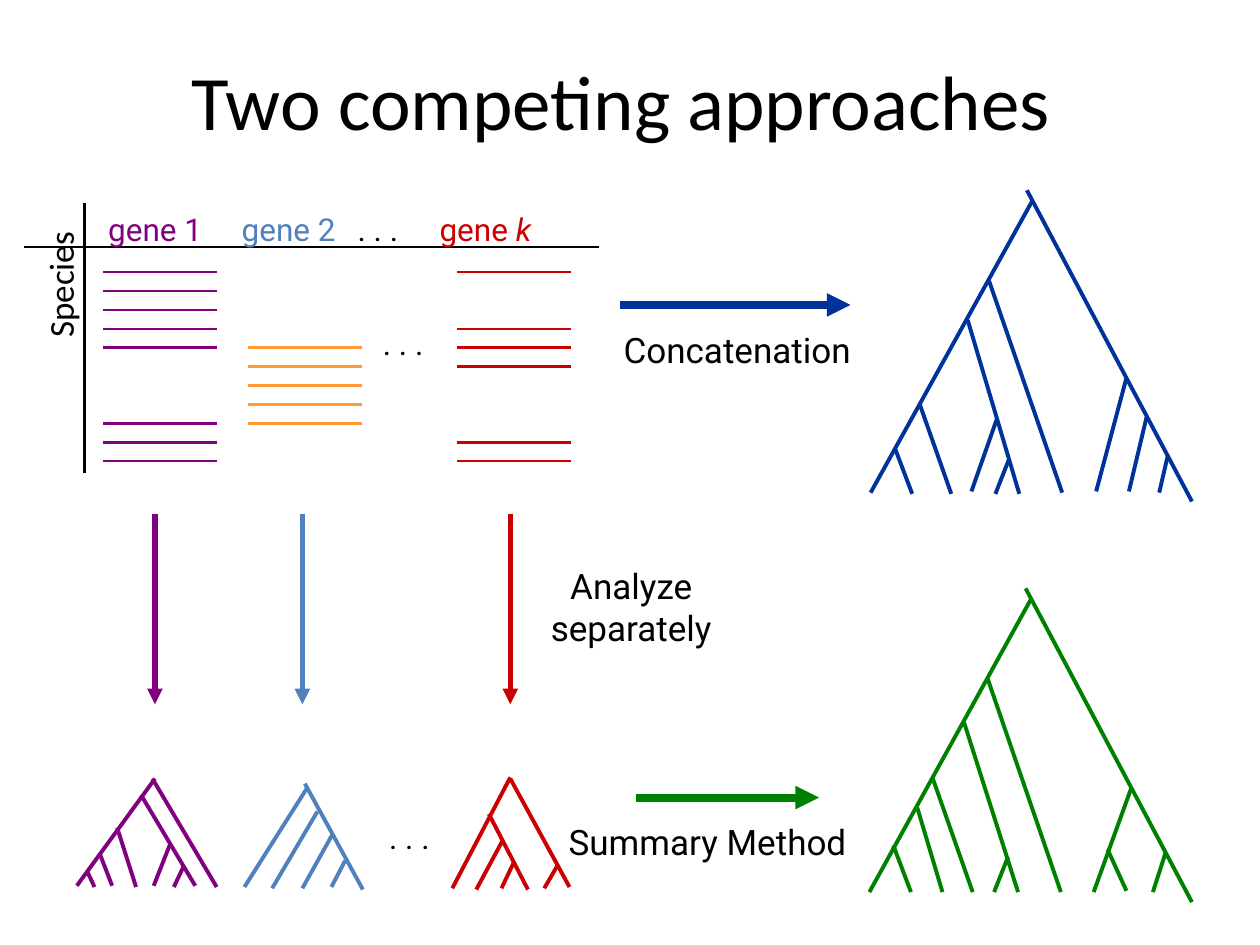
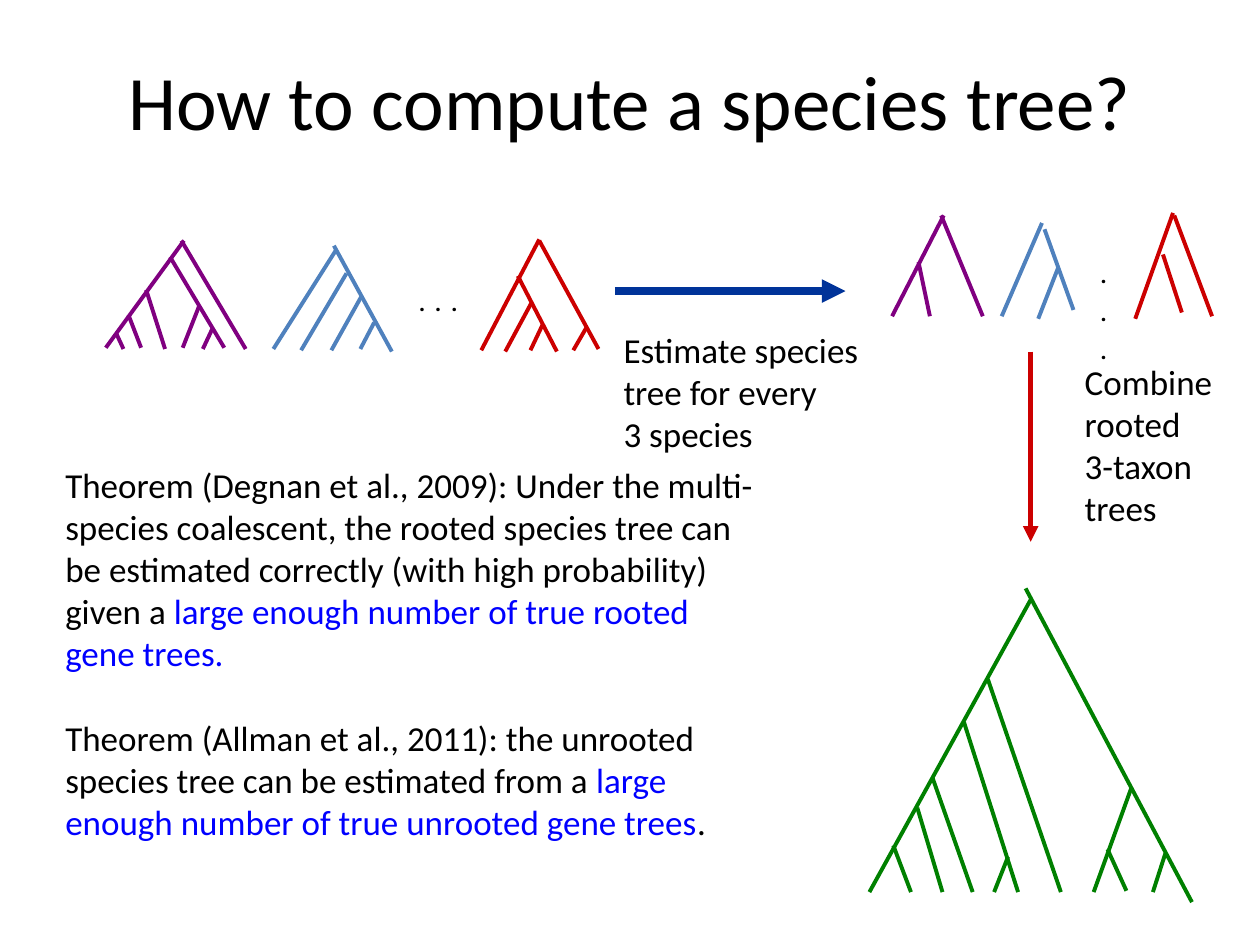
import pptx
import pptx.util
import pptx.dml.color
import pptx.enum.shapes
import pptx.enum.text
import pptx.oxml
import pptx.oxml.ns

Inches = pptx.util.Inches
Pt = pptx.util.Pt
RGBColor = pptx.dml.color.RGBColor
ALIGN = pptx.enum.text.PP_ALIGN
STRAIGHT = pptx.enum.shapes.MSO_CONNECTOR.STRAIGHT
qn = pptx.oxml.ns.qn

BLACK = RGBColor(0x00, 0x00, 0x00)
PURPLE = RGBColor(0x80, 0x00, 0x80)
BLUE = RGBColor(0x4F, 0x81, 0xBD)
RED = RGBColor(0xCC, 0x00, 0x00)
ORANGE = RGBColor(0xFF, 0x99, 0x33)
GREEN = RGBColor(0x00, 0x80, 0x00)
NAVY = RGBColor(0x00, 0x33, 0x99)
BRIGHT = RGBColor(0x00, 0x00, 0xFF)

SANS = "Calibri"
ROBOTO = "Roboto"
DOTS = ". . ."

GREEN_TREE = [
    (1.28, 0.09, 0, 2.41), (1.24, 0, 2.56, 2.49), (0.94, 0.72, 1.52, 2.41),
    (1.78, 2.41, 2.08, 1.58), (1.89, 2.07, 2.04, 2.4), (2.25, 2.41, 2.35, 2.1),
    (0.75, 1.06, 1.18, 2.41), (0.38, 1.74, 0.58, 2.41), (0.19, 2.04, 0.33, 2.41),
    (0.5, 1.5, 0.82, 2.41), (1.1, 2.13, 0.99, 2.41),
]
NAVY_TREE = [
    (1.28, 0.09, 0, 2.4), (1.24, 0, 2.55, 2.47), (0.94, 0.72, 1.52, 2.4),
    (1.79, 2.39, 2.03, 1.49), (2.19, 1.8, 2.05, 2.39), (2.29, 2.4, 2.36, 2.1),
    (0.77, 1.03, 1.18, 2.41), (0.39, 1.7, 0.64, 2.41), (0.19, 2.04, 0.33, 2.41),
    (1, 1.82, 0.8, 2.39), (1.1, 2.13, 0.99, 2.41),
]
GENE_TREES = [
    (0, 0.01, PURPLE, [
        (0.62, 0, 0, 0.85), (0.6, 0, 1.11, 0.86), (0.51, 0.13, 0.94, 0.85),
        (0.32, 0.39, 0.47, 0.86), (0.18, 0.59, 0.28, 0.85), (0.74, 0.52, 0.61, 0.85),
        (0.85, 0.69, 0.77, 0.86), (0.14, 0.86, 0.08, 0.73)]),
    (1.33, 0.05, BLUE, [
        (0.48, 0, 0.94, 0.84), (0, 0.82, 0.5, 0.03), (0.7, 0.4, 0.46, 0.83),
        (0.69, 0.82, 0.8, 0.61), (0.58, 0.22, 0.22, 0.83)]),
    (2.98, 0, RED, [
        (0.29, 0.29, 0.6, 0.89), (0, 0.88, 0.46, 0), (0.84, 0.69, 0.73, 0.88),
        (0.39, 0.88, 0.49, 0.67), (0.46, 0.01, 0.93, 0.87), (0.19, 0.89, 0.4, 0.5)]),
]
TRIPLETS = [
    (0, 0.02, PURPLE, [
        (0.41, 0, 0, 0.8), (0.39, 0, 0.72, 0.8), (0.21, 0.37, 0.3, 0.8)]),
    (0.87, 0.08, BLUE, [
        (0.34, 0.05, 0.57, 0.69), (0, 0.74, 0.32, 0), (0.45, 0.35, 0.29, 0.76)]),
    (1.93, 0, RED, [
        (0.22, 0.33, 0.37, 0.79), (0, 0.84, 0.3, 0), (0.31, 0.02, 0.61, 0.82)]),
]


def line(slide, x1, y1, x2, y2, color, width, arrow=False):
    link = slide.shapes.add_connector(
        STRAIGHT, Inches(x1), Inches(y1), Inches(x2), Inches(y2))
    link.line.color.rgb = color
    link.line.width = Pt(width)
    props = link._element.spPr
    if arrow:
        tail = pptx.oxml.parse_xml(
            '<a:tailEnd xmlns:a="http://schemas.openxmlformats.org/drawingml/2006/main"'
            ' type="triangle"/>')
        props.find(qn("a:ln")).append(tail)
    props.append(props.makeelement(qn("a:effectLst"), {}))


def style(para, font, size, color=BLACK):
    para.font.name = font
    para.font.size = Pt(size)
    para.font.color.rgb = color


def text(slide, x, y, w, h, rows, font, size, color=BLACK, align=ALIGN.LEFT, wrap=False):
    box = slide.shapes.add_textbox(Inches(x), Inches(y), Inches(w), Inches(h))
    frame = box.text_frame
    frame.word_wrap = wrap
    for i, row in enumerate(rows):
        para = frame.paragraphs[0] if i == 0 else frame.add_paragraph()
        para.alignment = align
        style(para, font, size, color)
        para.add_run().text = row
    return box


def dots(slide, x, y):
    text(slide, x, y, 0.55, 0.4, [DOTS], ROBOTO, 18)


def tree(slide, x, y, color, edges):
    for x1, y1, x2, y2 in edges:
        line(slide, x + x1, y + y1, x + x2, y + y2, color, 2.25)


def trees(slide, x, y, group):
    for dx, dy, color, edges in group:
        tree(slide, x + dx, y + dy, color, edges)


def genes(slide, x, y):
    trees(slide, x, y, GENE_TREES)
    dots(slide, x + 2.38, y + 0.27)


def start(deck, words):
    slide = deck.slides.add_slide(deck.slide_layouts[5])
    title = slide.shapes.title
    title.left, title.top = Inches(0.75), Inches(0.17)
    title.width, title.height = Inches(8.5), Inches(1.25)
    title.text_frame.text = words
    title.text_frame.vertical_anchor = pptx.enum.text.MSO_ANCHOR.MIDDLE
    para = title.text_frame.paragraphs[0]
    para.alignment = ALIGN.CENTER
    style(para, SANS, 44)
    return slide


def matrix(slide, x, y):
    line(slide, x + 0.48, y, x + 0.48, y + 2.14, BLACK, 1.5)
    line(slide, x, y + 0.35, x + 4.56, y + 0.35, BLACK, 1.5)
    heads = [(0.57, "gene 1", PURPLE), (1.63, "gene 2", BLUE), (3.2, "gene ", RED)]
    for dx, name, color in heads:
        head = text(slide, x + dx, y + 0.01, 0.95, 0.4, [name], ROBOTO, 18, color)
    run = head.text_frame.paragraphs[0].add_run()
    run.text = "k"
    run.font.italic = True
    dots(slide, x + 2.55, y + 0.01)
    dots(slide, x + 2.75, y + 0.91)
    bars = [
        (0.63, PURPLE, [0, 1, 2, 3, 4, 8, 9, 10]),
        (1.78, ORANGE, range(4, 9)),
        (3.44, RED, [0, 3, 4, 5, 9, 10]),
    ]
    for dx, color, rows in bars:
        for row in rows:
            level = y + 0.55 + 0.15 * row
            line(slide, x + dx, level, x + dx + 0.9, level, color, 1.5)
    side = text(slide, x - 0.31, y + 0.36, 1.19, 0.43, ["Species"], SANS, 20)
    side.rotation = 270


def rivals(deck):
    slide = start(deck, "Two competing approaches ")
    matrix(slide, 0.19, 1.61)
    for x, color in [(1.23, PURPLE), (2.4, BLUE), (4.05, RED)]:
        line(slide, x, 4.08, x, 5.59, color, 3, True)
    text(slide, 4.27, 4.43, 1.48, 0.77, ["Analyze", "separately"],
         ROBOTO, 20, align=ALIGN.CENTER)
    genes(slide, 0.61, 6.17)
    line(slide, 4.92, 2.42, 6.75, 2.42, NAVY, 4.5, True)
    text(slide, 4.85, 2.56, 2.01, 0.44, ["Concatenation"], ROBOTO, 20)
    tree(slide, 6.91, 1.51, NAVY, NAVY_TREE)
    line(slide, 5.05, 6.33, 6.5, 6.33, GREEN, 4.5, True)
    text(slide, 4.37, 6.46, 2.49, 0.44, ["Summary Method"],
         ROBOTO, 20, align=ALIGN.CENTER)
    tree(slide, 6.9, 4.67, GREEN, GREEN_TREE)


def theorems(slide, x, y):
    box = text(slide, x, y, 5.66, 3.13, [
        "Theorem (Degnan et al., 2009): Under the multi-species coalescent, the rooted "
        "species tree can be estimated correctly (with high probability) given a ",
        "Theorem (Allman et al., 2011): the unrooted species tree can be estimated from a ",
    ], SANS, 20, wrap=True)
    first, last = box.text_frame.paragraphs
    first.space_after = Pt(24.4)
    claims = [
        (first, "large enough number of true rooted gene trees."),
        (last, "large enough number of true unrooted gene trees"),
    ]
    for para, claim in claims:
        run = para.add_run()
        run.text = claim
        run.font.color.rgb = BRIGHT
    last.add_run().text = "."


def method(deck):
    slide = start(deck, "How to compute a species tree?")
    genes(slide, 0.84, 1.9)
    line(slide, 4.88, 2.31, 6.71, 2.31, NAVY, 4.5, True)
    text(slide, 4.85, 2.56, 2.09, 1.11,
         ["Estimate species", "tree for every", "3 species"], SANS, 20)
    trees(slide, 7.08, 1.69, TRIPLETS)
    text(slide, 8.63, 1.95, 0.36, 0.38, [DOTS], ROBOTO, 18, wrap=True)
    line(slide, 8.18, 2.79, 8.18, 4.3, RED, 3, True)
    text(slide, 8.51, 2.81, 1.22, 1.45,
         ["Combine", "rooted", "3-taxon", "trees"], SANS, 20)
    tree(slide, 6.9, 4.67, GREEN, GREEN_TREE)
    theorems(slide, 0.42, 3.63)


def main():
    deck = pptx.Presentation()
    deck.slide_width = Inches(10)
    deck.slide_height = Inches(7.5)
    rivals(deck)
    method(deck)
    deck.save("out.pptx")


if __name__ == "__main__":
    main()
